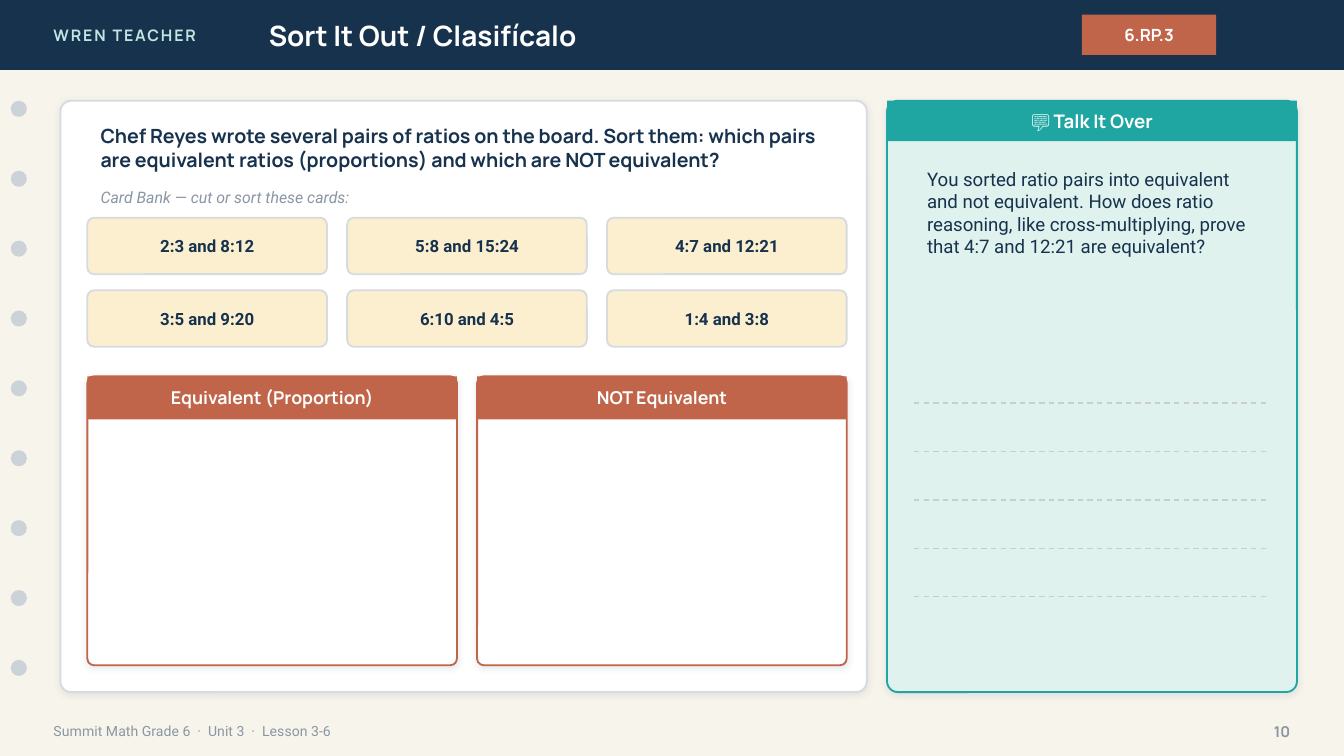
"""Build the ratio sorting activity slide."""
from lxml.etree import SubElement
from pptx import Presentation
from pptx.dml.color import RGBColor
from pptx.enum.dml import MSO_LINE
from pptx.enum.shapes import MSO_CONNECTOR, MSO_SHAPE
from pptx.enum.text import MSO_ANCHOR, MSO_AUTO_SIZE, PP_ALIGN
from pptx.oxml.ns import qn
from pptx.util import Pt

color = RGBColor.from_string
RECT, ROUND, OVAL = MSO_SHAPE.RECTANGLE, MSO_SHAPE.ROUNDED_RECTANGLE, MSO_SHAPE.OVAL
LEFT, CENTER, RIGHT = PP_ALIGN.LEFT, PP_ALIGN.CENTER, PP_ALIGN.RIGHT
MIDDLE, TOP = MSO_ANCHOR.MIDDLE, MSO_ANCHOR.TOP
NAVY, WHITE, GRAY, BORDER = "17324D", "FFFFFF", "8A96A3", "D6DBDF"
RUST, TEAL = "C0654A", "1FA6A2"

presentation = Presentation()
presentation.slide_width, presentation.slide_height = Pt(720), Pt(405)
slide = presentation.slides.add_slide(presentation.slide_layouts[5])
slide.background.fill.solid()
slide.background.fill.fore_color.rgb = color("F7F4EC")
shapes = slide.shapes


def add_box(kind, left, top, width, height, fill, line=None, radius=0, shadow=False):
    """Add a filled shape with an optional border, corner radius and soft shadow."""
    shape = shapes.add_shape(kind, Pt(left), Pt(top), Pt(width), Pt(height))
    shape.fill.solid()
    shape.fill.fore_color.rgb = color(fill)
    if line:
        shape.line.color.rgb = color(line)
        shape.line.width = Pt(1)
    else:
        shape.line.fill.background()
    if kind == ROUND:
        shape.adjustments[0] = radius / min(width, height)
    shape.shadow.inherit = False
    if shadow:
        effects = shape._element.spPr.find(qn("a:effectLst"))
        outer = SubElement(effects, qn("a:outerShdw"), blurRad=str(Pt(4)), dist=str(Pt(1)),
                           dir="5400000", algn="bl", rotWithShape="0")
        tint = SubElement(outer, qn("a:srgbClr"), val="1C2E42")
        SubElement(tint, qn("a:alpha"), val="10000")
    return shape


def write(shape, text, size, font, fill, align=CENTER, anchor=MIDDLE, bold=True, italic=False):
    """Put one formatted paragraph in a shape and return the paragraph."""
    frame = shape.text_frame
    frame.word_wrap = True
    frame.auto_size = MSO_AUTO_SIZE.NONE
    frame.vertical_anchor = anchor
    paragraph = frame.paragraphs[0]
    paragraph.text = text
    paragraph.alignment = align
    paragraph.font.size = Pt(size)
    paragraph.font.name = font
    paragraph.font.bold = bold
    paragraph.font.italic = italic
    paragraph.font.color.rgb = color(fill)
    return paragraph


header = add_box(RECT, 0, 0, 720, 37.44, NAVY)
title = shapes.title
title.left, title.top, title.width, title.height = Pt(136.8), Pt(0), Pt(403.2), Pt(37.44)
write(title, "Sort It Out / Clasifícalo", 15, "Manrope", WHITE, LEFT)
header._element.addnext(title._element)
brand = shapes.add_textbox(Pt(21.6), Pt(0), Pt(172.8), Pt(37.44))
brand_line = write(brand, "WREN TEACHER", 8.5, "Manrope", "BFE6E2", LEFT)
brand_line.runs[0]._r.get_or_add_rPr().set("spc", "100")
write(add_box(RECT, 579.6, 7.92, 72, 21.6, RUST), "6.RP.3", 9, "Manrope", WHITE)

for hole in range(9):
    add_box(OVAL, 5.76, 54 + hole * 37.44, 8.64, 8.64, "CBD3D9")

footer = shapes.add_textbox(Pt(21.6), Pt(381.6), Pt(504), Pt(20.16))
write(footer, "Summit Math Grade 6\u00a0 ·\u00a0 Unit 3\u00a0 ·\u00a0 Lesson 3-6".replace("\u00a0", " "),
      7.5, "Roboto", GRAY, LEFT, bold=False)
page_number = shapes.add_textbox(Pt(662.4), Pt(381.6), Pt(36), Pt(20.16))
write(page_number, "10", 8, "Manrope", GRAY, RIGHT)

add_box(ROUND, 32.4, 54, 432, 316.8, WHITE, BORDER, 5.76, True)
question = shapes.add_textbox(Pt(46.8), Pt(64.8), Pt(403.2), Pt(28.8))
write(question, "Chef Reyes wrote several pairs of ratios on the board. Sort them: which pairs "
      "are equivalent ratios (proportions) and which are NOT equivalent?",
      10.5, "Manrope", NAVY, LEFT)
hint = shapes.add_textbox(Pt(46.8), Pt(97.2), Pt(403.2), Pt(17.28))
write(hint, "Card Bank — cut or sort these cards:", 8.5, "Roboto", GRAY, LEFT,
      bold=False, italic=True)

cards = ["2:3 and 8:12", "5:8 and 15:24", "4:7 and 12:21",
         "3:5 and 9:20", "6:10 and 4:5", "1:4 and 3:8"]
for index, ratios in enumerate(cards):
    row, column = divmod(index, 3)
    card = add_box(ROUND, 46.8 + column * 139.2, 116.64 + row * 38.88, 128.4, 30.24,
                   "FBEFD0", BORDER, 3.6)
    write(card, ratios, 9, "Roboto", NAVY)

for column, heading in enumerate(["Equivalent (Proportion)", "NOT Equivalent"]):
    left = 46.8 + column * 208.8
    add_box(ROUND, left, 201.6, 198, 154.8, WHITE, RUST, 3.6, True)
    write(add_box(RECT, left, 201.6, 198, 23.04, RUST), heading, 9.5, "Manrope", WHITE)

add_box(ROUND, 475.2, 54, 219.6, 316.8, "DFF2EE", TEAL, 5.76, True)
write(add_box(RECT, 475.2, 54, 219.6, 21.6, TEAL), "💬 Talk It Over", 10, "Manrope", WHITE)
prompt = shapes.add_textbox(Pt(489.6), Pt(86.4), Pt(194.4), Pt(108))
write(prompt, "You sorted ratio pairs into equivalent and not equivalent. How does ratio "
      "reasoning, like cross-multiplying, prove that 4:7 and 12:21 are equivalent?",
      10, "Roboto", NAVY, LEFT, TOP, bold=False)

for index in range(5):
    height = Pt(216 + index * 25.92)
    rule = shapes.add_connector(MSO_CONNECTOR.STRAIGHT, Pt(489.6), height, Pt(680.4), height)
    rule.line.color.rgb = color("C7CDD2")
    rule.line.width = Pt(0.75)
    rule.line.dash_style = MSO_LINE.DASH
    SubElement(rule._element.spPr, qn("a:effectLst"))

presentation.save("out.pptx")
